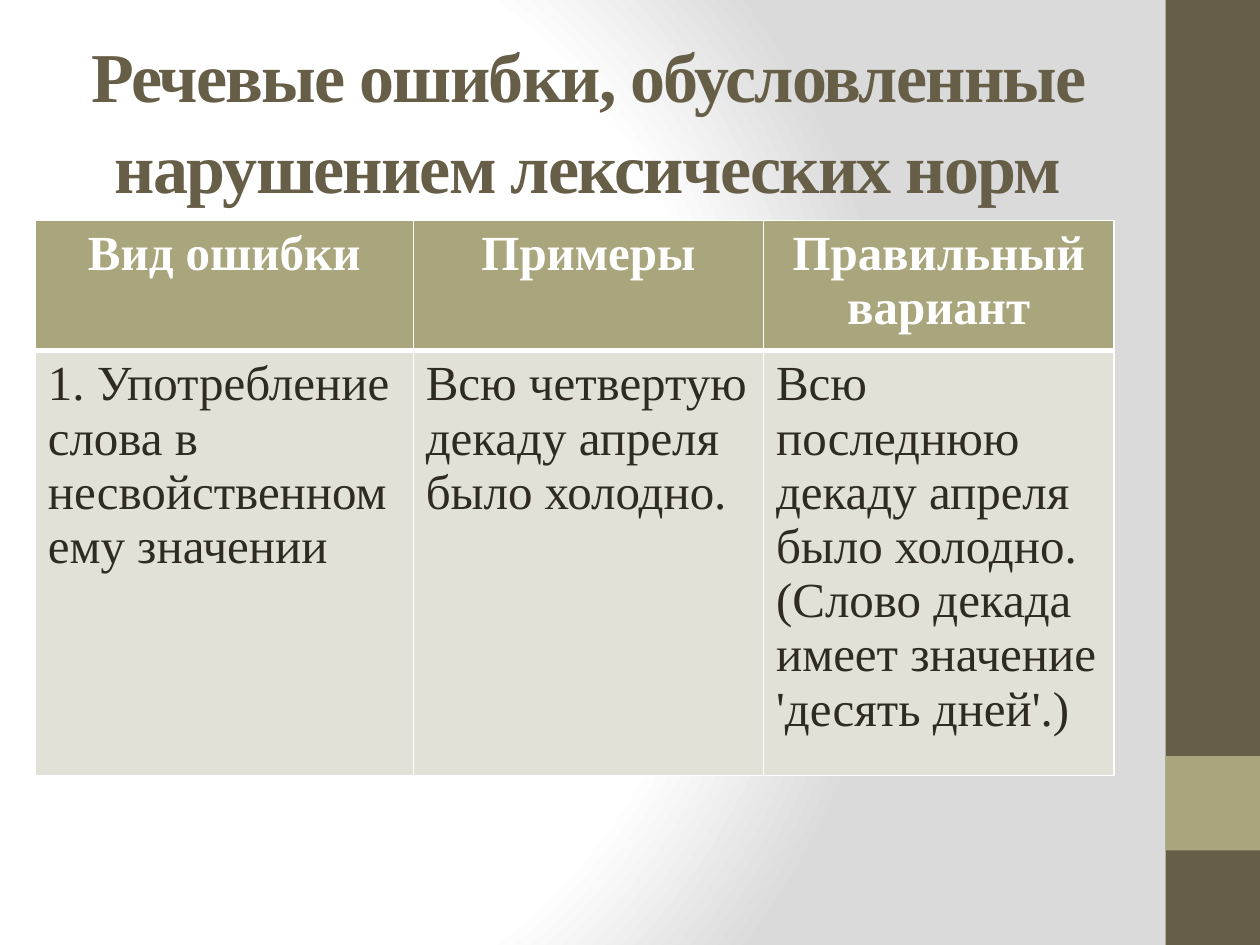
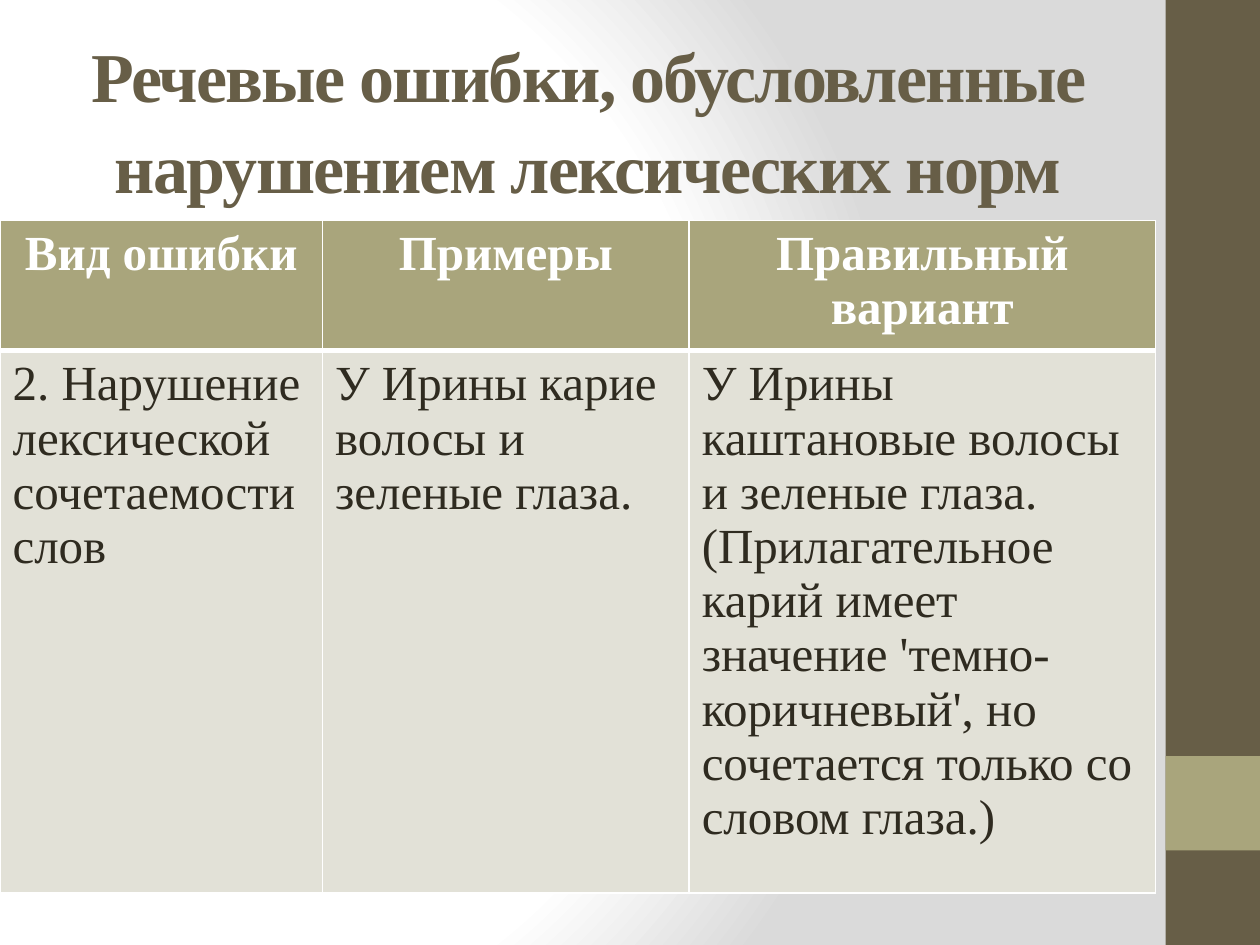
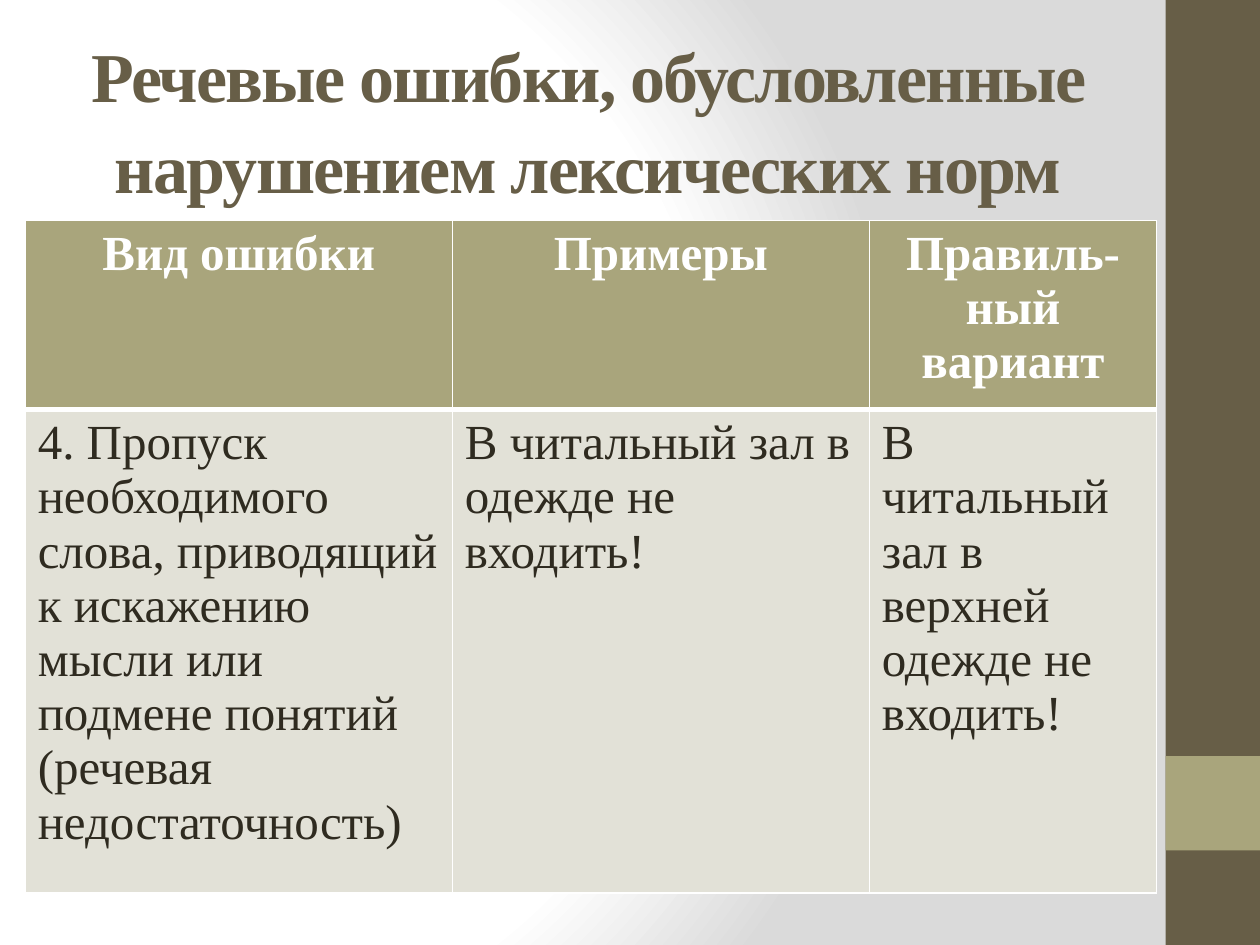
"""Build three slides on speech errors that break lexical norms."""
import lxml.etree
import pptx
import pptx.dml.color
import pptx.enum.shapes
import pptx.enum.text
import pptx.oxml.ns
import pptx.util

Pt = pptx.util.Pt
RGB = pptx.dml.color.RGBColor.from_string
CENTER = pptx.enum.text.PP_ALIGN.CENTER
RECT = pptx.enum.shapes.MSO_SHAPE.RECTANGLE
NS = pptx.oxml.ns.nsdecls("a")
FONT = "Times New Roman"
COLORS = {
    "brown": "675E47",
    "olive": "A9A57C",
    "pale": "E2E1D7",
    "ink": "2F2B20",
    "white": "FFFFFF",
    "gray": "DADADA",
}
TITLE = "Речевые ошибки, обусловленные нарушением лексических норм"
BANDS = [(0, 540, "brown"), (432, 54, "olive")]
TOP, LINE, PAD = 126, 31, 7.2

PAGES = [
    {
        "left": 20.16,
        "cols": [216, 200.16, 200.16],
        "lines": [2, 7],
        "last": "Правильный вариант",
        "body": [
            "1. Употребление слова в несвойственном ему значении",
            "Всю четвертую декаду апреля было холодно.",
            "Всю последнюю декаду апреля было холодно. "
            "(Слово декада имеет значение 'десять дней'.)",
        ],
    },
    {
        "left": 0,
        "cols": [184.32, 209.52, 266.4],
        "lines": [2, 9],
        "last": "Правильный вариант",
        "body": [
            "2. Нарушение лексической сочетаемости слов",
            "У Ирины карие волосы и зеленые глаза.",
            "У Ирины каштановые волосы и зеленые глаза. "
            "(Прилагательное карий имеет значение 'темно-коричневый', "
            "но сочетается только со словом глаза.)",
        ],
    },
    {
        "left": 14.4,
        "cols": [244.08, 238.32, 164.16],
        "lines": [3, 8],
        "last": "Правиль-ный вариант",
        "body": [
            "4. Пропуск необходимого слова, приводящий к искажению мысли "
            "или подмене понятий (речевая недостаточность)",
            "В читальный зал в одежде не входить!",
            "В читальный зал в верхней одежде не входить!",
        ],
    },
]


def style(para, size, color, bold):
    """Format every run of a paragraph."""
    for run in para.runs:
        run.font.name = FONT
        run.font.size = Pt(size)
        run.font.bold = bold
        run.font.color.rgb = RGB(COLORS[color])


def edge(cell, sides):
    """Draw white cell borders, given widths by side."""
    props = cell._tc.get_or_add_tcPr()
    for spot, (side, width) in enumerate(sides.items()):
        props.insert(spot, lxml.etree.fromstring(
            f'<a:ln{side} {NS} w="{Pt(width)}"><a:solidFill>'
            f'<a:srgbClr val="{COLORS["white"]}"/></a:solidFill></a:ln{side}>'))


deck = pptx.Presentation()
deck.slide_width, deck.slide_height = Pt(720), Pt(540)

master = deck.slide_master
master.background.fill.gradient()
back = master.element.find(".//" + pptx.oxml.ns.qn("p:bgPr"))
stops = "".join(
    f'<a:gs pos="{spot * 1000}"><a:srgbClr val="{COLORS[name]}"/></a:gs>'
    for spot, name in [(0, "white"), (75, "white"), (100, "gray")])
back.replace(back[0], pptx.oxml.parse_xml(
    f'<a:gradFill {NS} rotWithShape="1"><a:gsLst>{stops}</a:gsLst>'
    '<a:path path="circle">'
    '<a:fillToRect l="20000" t="50000" r="100000" b="50000"/>'
    '</a:path></a:gradFill>'))

for page in PAGES:
    slide = deck.slides.add_slide(deck.slide_layouts[6])
    for top, height, color in BANDS:
        band = slide.shapes.add_shape(RECT, Pt(666), Pt(top), Pt(54), Pt(height))
        band.shadow.inherit = False
        band.fill.solid()
        band.fill.fore_color.rgb = RGB(COLORS[color])
        band.line.fill.background()

    title = slide.shapes.add_textbox(Pt(36), Pt(21.6), Pt(600), Pt(90))
    frame = title.text_frame
    frame.word_wrap = True
    frame.vertical_anchor = pptx.enum.text.MSO_ANCHOR.MIDDLE
    frame.text = TITLE
    para = frame.paragraphs[0]
    para.alignment = CENTER
    para.line_spacing = 1.08
    style(para, 40, "brown", True)
    para.runs[0].font._element.set("spc", "-100")

    heights = [LINE * count + PAD for count in page["lines"]]
    grid = slide.shapes.add_table(
        2, 3, Pt(page["left"]), Pt(TOP),
        Pt(sum(page["cols"])), Pt(sum(heights))).table
    grid.horz_banding = False
    for col, width in zip(grid.columns, page["cols"]):
        col.width = Pt(width)
    for row, height in zip(grid.rows, heights):
        row.height = Pt(height)

    rows = [["Вид ошибки", "Примеры", page["last"]], page["body"]]
    for r, texts in enumerate(rows):
        head = r == 0
        for c, text in enumerate(texts):
            cell = grid.cell(r, c)
            cell.text = text
            cell.fill.solid()
            cell.fill.fore_color.rgb = RGB(COLORS["olive" if head else "pale"])
            para = cell.text_frame.paragraphs[0]
            if head:
                para.alignment = CENTER
            style(para, 28, "white" if head else "ink", head)
            edge(cell, {"L": 1, "R": 1, "T": 1 if head else 3, "B": 3 if head else 1})

deck.save("out.pptx")
